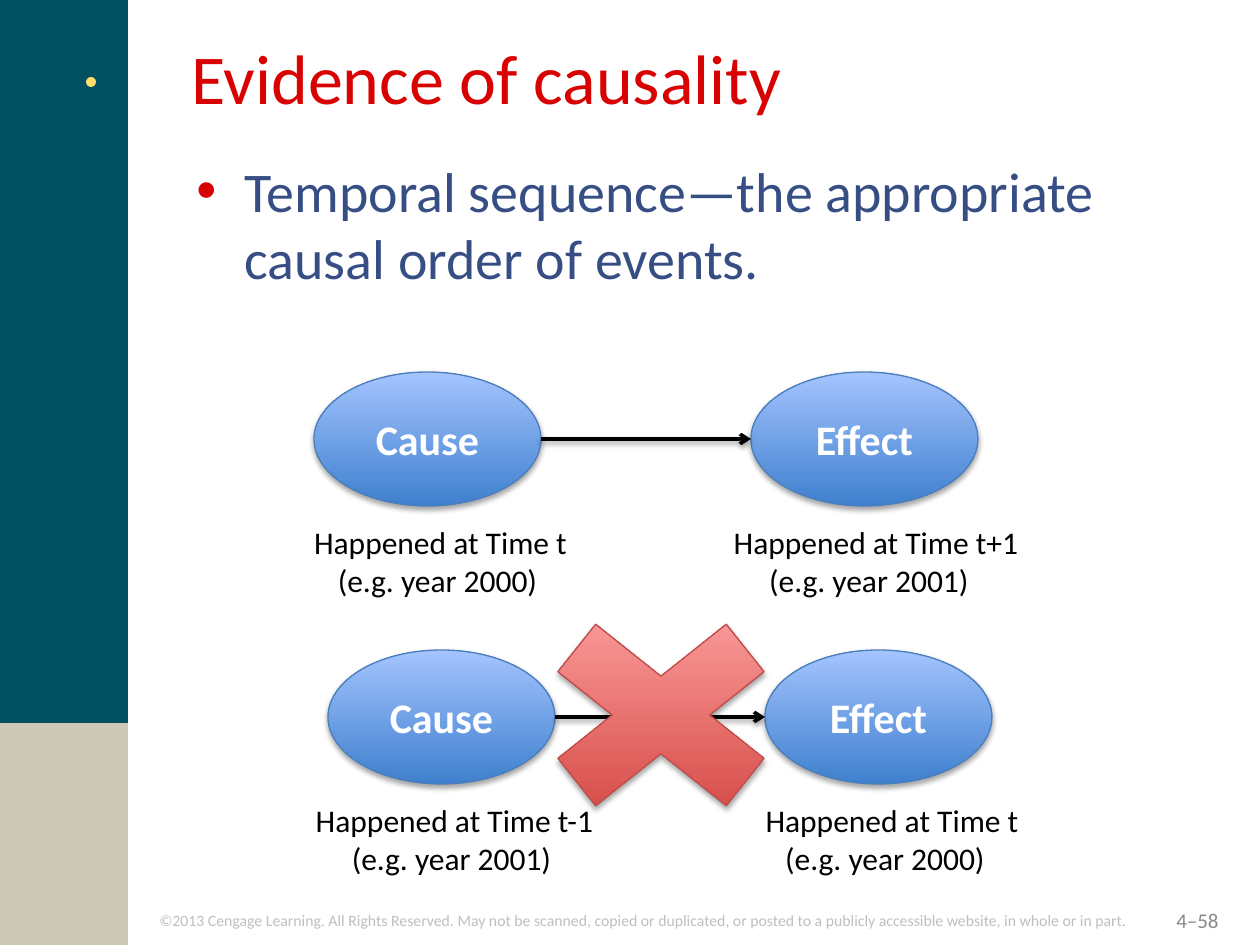
from lxml import etree
from pptx import Presentation
from pptx import util as u
from pptx.dml.color import RGBColor
from pptx.enum import shapes, text
from pptx.oxml import ns

SCALE = 914400 / 126
COLORS = {
    "teal": "005061", "sand": "CEC9B6", "yellow": "FFDE6A", "red": "D80202",
    "navy": "364E84", "black": "000000", "white": "FFFFFF",
    "silver": "BFBFBF", "gray": "898989",
    "blue_dark": "3F80CE", "blue_light": "A4C4FF", "blue_edge": "4B7EBC",
    "red_dark": "D1403C", "red_light": "FFA6A5", "red_edge": "BF4C48",
}
FORMATS = {
    "title": {"size": 40, "color": "red"},
    "body": {"size": 32, "color": "navy"},
    "node": {"size": 24, "color": "white", "bold": True},
    "label": {"size": 18, "color": "black"},
    "copyright": {"size": 9, "color": "silver"},
    "number": {"size": 12, "color": "gray"},
}
LEFT, CENTER, RIGHT = text.PP_ALIGN.LEFT, text.PP_ALIGN.CENTER, text.PP_ALIGN.RIGHT
TOP, MIDDLE = text.MSO_ANCHOR.TOP, text.MSO_ANCHOR.MIDDLE


def px(length):
    return u.Emu(round(length * SCALE))


def rgb(name):
    return RGBColor.from_string(COLORS[name])


def child(parent, tag, **attributes):
    node = etree.SubElement(parent, ns.qn(tag))
    for name, value in attributes.items():
        node.set(name, str(value))
    return node


class CausalitySlide:
    def __init__(self, slide, font="Calibri"):
        self.slide = slide
        self.font = font

    def fill_text(self, frame, lines, style, align=LEFT, anchor=TOP):
        frame.vertical_anchor = anchor
        for index, line in enumerate(lines):
            paragraph = frame.paragraphs[0] if index == 0 else frame.add_paragraph()
            paragraph.alignment = align
            run = paragraph.add_run()
            run.text = line
            run.font.name = self.font
            for name, value in FORMATS[style].items():
                if name == "color":
                    run.font.color.rgb = rgb(value)
                else:
                    setattr(run.font, name, u.Pt(value) if name == "size" else value)

    def text(self, box, lines, style, align=LEFT, anchor=TOP, wrap=True):
        frame = self.slide.shapes.add_textbox(*map(px, box)).text_frame
        frame.word_wrap = wrap
        self.fill_text(frame, lines, style, align, anchor)
        return frame

    def bullet(self, box, line):
        frame = self.text(box, [line], "body")
        properties = frame.paragraphs[0]._p.get_or_add_pPr()
        indent = px(48)
        properties.set("marL", str(indent))
        properties.set("indent", str(-indent))
        child(child(properties, "a:buClr"), "a:srgbClr", val=COLORS["red"])
        child(properties, "a:buSzPct", val=102000)
        child(properties, "a:buFont", typeface="Arial")
        child(properties, "a:buChar", char="•")

    def flat(self, kind, box, color):
        shape = self.slide.shapes.add_shape(kind, *map(px, box))
        shape.shadow.inherit = False
        shape.fill.solid()
        shape.fill.fore_color.rgb = rgb(color)
        shape.line.fill.background()

    def drop_shadow(self, shape, distance, opacity):
        """Give a shape or connector a soft shadow; its line must be set before."""
        effects = child(shape._element.spPr, "a:effectLst")
        shadow = child(effects, "a:outerShdw", blurRad=40000, dist=distance,
                       dir=5400000, rotWithShape=0)
        tint = child(shadow, "a:srgbClr", val=COLORS["black"])
        child(tint, "a:alpha", val=opacity * 1000)

    def glossy(self, kind, box, hue):
        shape = self.slide.shapes.add_shape(kind, *map(px, box))
        shape.fill.gradient()
        shape.fill.gradient_angle = 90
        for stop, shade in zip(shape.fill.gradient_stops, ("dark", "light")):
            stop.color.rgb = rgb(f"{hue}_{shade}")
        shape.line.color.rgb = rgb(f"{hue}_edge")
        shape.line.width = u.Pt(0.75)
        self.drop_shadow(shape, 23000, 35)
        return shape

    def node(self, box, caption):
        oval = self.glossy(shapes.MSO_SHAPE.OVAL, box, "blue")
        self.fill_text(oval.text_frame, [caption], "node", CENTER, MIDDLE)

    def arrow(self, left, right, y):
        line = self.slide.shapes.add_connector(
            shapes.MSO_CONNECTOR.STRAIGHT, px(left), px(y), px(right), px(y))
        line.line.color.rgb = rgb("black")
        line.line.width = u.Pt(2)
        child(line.line._ln, "a:tailEnd", type="arrow")
        self.drop_shadow(line, 20000, 38)

    def label(self, box, lines, nudge):
        """Centred label whose second line sits nudge px left of the centre."""
        frame = self.text(box, lines, "label", CENTER, wrap=False)
        properties = frame.paragraphs[1]._p.get_or_add_pPr()
        properties.set("marR", str(px(2 * nudge)))

    def sequence(self, left, top, cause_label, effect_label):
        """Cause and effect ovals joined by an arrow, each with its time label."""
        width, height, step = 227, 134, 437
        self.node((left, top, width, height), "Cause")
        self.node((left + step, top, width, height), "Effect")
        self.arrow(left + width, left + step, top + height // 2)
        for (x, label_width, lines), nudge in ((cause_label, 3), (effect_label, 7)):
            self.label((x, top + 145, label_width, 89), lines, nudge)


def main():
    deck = Presentation()
    deck.slide_width, deck.slide_height = px(1260), px(945)
    page = CausalitySlide(deck.slides.add_slide(deck.slide_layouts[6]))

    page.flat(shapes.MSO_SHAPE.RECTANGLE, (0, 0, 128, 945), "teal")
    page.flat(shapes.MSO_SHAPE.RECTANGLE, (0, 723, 128, 222), "sand")
    page.flat(shapes.MSO_SHAPE.OVAL, (86, 77, 10, 10), "yellow")
    page.text((147, 905, 1113, 32), [
        "©2013 Cengage Learning. All Rights Reserved. May not be scanned, copied or "
        "duplicated, or posted to a publicly accessible website, in whole or in part."
    ], "copyright")
    page.text((937, 895, 294, 50), ["4–58"], "number", RIGHT, MIDDLE)

    page.text((179, 28, 1070, 121), ["Evidence of causality"], "title")
    page.bullet((184, 150, 1070, 694),
                "Temporal sequence—the appropriate causal order of events.")

    page.sequence(314, 372,
                  (300, 281, ["Happened at Time t", "(e.g. year 2000)"]),
                  (719, 314, ["Happened at Time t+1", "(e.g. year 2001)"]))
    page.sequence(328, 650,
                  (301, 307, ["Happened at Time t-1", "(e.g. year 2001)"]),
                  (751, 282, ["Happened at Time t", "(e.g. year 2000)"]))
    page.glossy(shapes.MSO_SHAPE.MATH_MULTIPLY, (499, 586, 324, 258), "red")

    deck.save("out.pptx")


if __name__ == "__main__":
    main()
